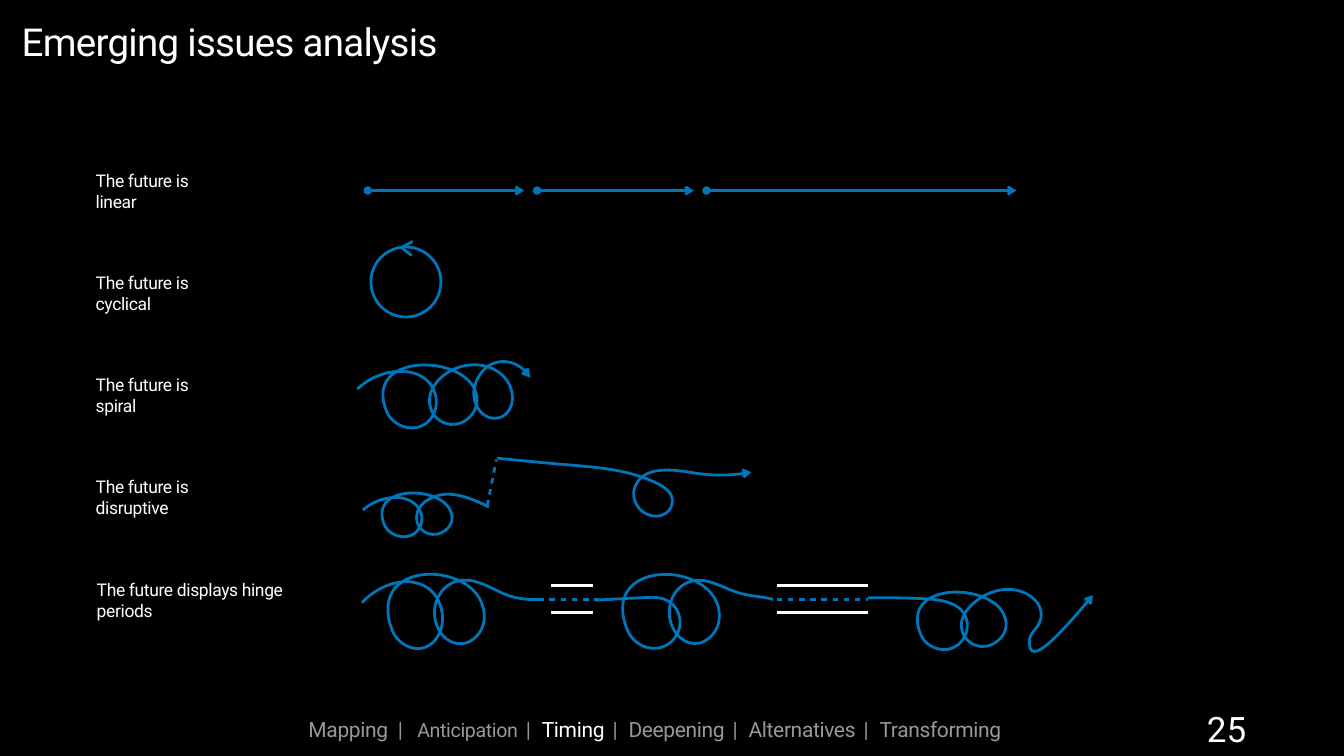
from dataclasses import dataclass
from typing import Any

import lxml.etree
import pptx
import pptx.dml.color
import pptx.enum.shapes
import pptx.enum.text
import pptx.oxml.ns
import pptx.util

Inches = pptx.util.Inches
qn = pptx.oxml.ns.qn
Align = pptx.enum.text.PP_ALIGN
Anchor = pptx.enum.text.MSO_ANCHOR

BLACK = pptx.dml.color.RGBColor(0x00, 0x00, 0x00)
WHITE = pptx.dml.color.RGBColor(0xFF, 0xFF, 0xFF)
GREY = pptx.dml.color.RGBColor(0x98, 0x98, 0x98)
BLUE = pptx.dml.color.RGBColor(0x00, 0x76, 0xBA)
FONT = "Roboto"
STROKE = 4
HINGE_Y = 11.89
HINGE_GAP = 0.27


@dataclass(frozen=True)
class Span:
    text: str
    size: float
    color: pptx.dml.color.RGBColor = WHITE
    spacing: float = -0.5


@dataclass(frozen=True)
class Label:
    text: str
    left: float
    top: float
    width: float


@dataclass(frozen=True)
class Line:
    start: tuple[float, float]
    end: tuple[float, float]
    color: pptx.dml.color.RGBColor = BLUE
    dashed: bool = False
    head: str = ""
    tail: str = ""


@dataclass(frozen=True)
class Curve:
    box: tuple[float, float, float, float]
    start: tuple[float, float]
    beziers: list[tuple[float, ...]]
    tail: str = ""


LABELS = [
    Label("The future is linear", 1.84, 3.52, 2.73),
    Label("The future is cyclical", 1.84, 5.55, 3),
    Label("The future is spiral", 1.84, 7.58, 2.73),
    Label("The future is disruptive", 1.84, 9.61, 3.35),
    Label("The future displays hinge periods", 1.86, 11.65, 4.85),
]

SPIRAL = Curve((7.09, 7.19, 3.43, 1.3), (7.09, 7.72), [
    (7.29, 7.53, 7.53, 7.42, 7.78, 7.38), (8.13, 7.33, 8.53, 7.43, 8.64, 7.83),
    (8.73, 8.16, 8.5, 8.51, 8.15, 8.49), (7.95, 8.48, 7.76, 8.36, 7.68, 8.18),
    (7.17, 7, 9.2, 7.01, 9.44, 7.78), (9.5, 7.97, 9.46, 8.17, 9.27, 8.32),
    (8.99, 8.53, 8.63, 8.4, 8.54, 8.08), (8.46, 7.8, 8.65, 7.52, 8.94, 7.36),
    (9.51, 7.05, 10.18, 7.36, 10.17, 7.92), (10.16, 8.07, 10.09, 8.21, 9.96, 8.27),
    (9.62, 8.42, 9.27, 8, 9.45, 7.57), (9.65, 7.1, 10.27, 7.06, 10.52, 7.49),
], "arrow")
BEFORE_DISRUPTION = Curve((7.2, 9.78, 2.49, 0.87), (7.2, 10.12), [
    (7.35, 9.99, 7.53, 9.91, 7.71, 9.88), (7.98, 9.84, 8.27, 9.92, 8.36, 10.19),
    (8.42, 10.43, 8.25, 10.67, 7.99, 10.65), (7.84, 10.64, 7.7, 10.56, 7.64, 10.44),
    (7.26, 9.61, 8.77, 9.62, 8.95, 10.16), (9, 10.29, 8.97, 10.43, 8.83, 10.53),
    (8.62, 10.68, 8.35, 10.59, 8.28, 10.37), (8.22, 10.16, 8.36, 9.96, 8.58, 9.87),
    (8.94, 9.71, 9.34, 9.88, 9.7, 10.06),
])
AFTER_DISRUPTION = Curve((9.86, 9.09, 5.05, 1.15), (9.86, 9.09), [
    (10.36, 9.14, 10.86, 9.19, 11.36, 9.23), (11.93, 9.28, 12.51, 9.33, 13.04, 9.59),
    (13.21, 9.67, 13.37, 9.8, 13.34, 9.98), (13.31, 10.23, 12.98, 10.33, 12.75, 10.15),
    (12.61, 10.04, 12.54, 9.85, 12.59, 9.69), (12.73, 9.25, 13.28, 9.3, 13.75, 9.38),
    (14.13, 9.44, 14.51, 9.44, 14.91, 9.37),
], "arrow")
HINGE_CURVES = [
    Curve((7.18, 11.4, 3.54, 1.47), (7.18, 11.96), [
        (7.39, 11.74, 7.63, 11.61, 7.88, 11.56), (8.24, 11.49, 8.65, 11.62, 8.76, 12.09),
        (8.86, 12.48, 8.62, 12.89, 8.26, 12.87), (8.06, 12.85, 7.86, 12.71, 7.78, 12.5),
        (7.26, 11.11, 9.33, 11.12, 9.58, 12.03), (9.65, 12.25, 9.61, 12.5, 9.41, 12.67),
        (9.13, 12.89, 8.78, 12.74, 8.66, 12.38), (8.54, 12.02, 8.72, 11.63, 9.07, 11.53),
        (9.38, 11.45, 9.67, 11.63, 9.95, 11.76), (10.06, 11.81, 10.18, 11.85, 10.3, 11.87),
        (10.44, 11.9, 10.58, 11.9, 10.72, 11.89),
    ]),
    Curve((11.82, 11.4, 3.53, 1.47), (11.82, 11.91), [
        (12.14, 11.89, 12.46, 11.87, 12.76, 11.86), (13, 11.84, 13.27, 11.84, 13.42, 12.08),
        (13.64, 12.44, 13.35, 12.91, 12.92, 12.86), (12.72, 12.84, 12.53, 12.7, 12.45, 12.5),
        (11.89, 11.13, 13.99, 11.11, 14.25, 12.03), (14.31, 12.25, 14.27, 12.5, 14.07, 12.66),
        (13.8, 12.89, 13.45, 12.74, 13.32, 12.38), (13.2, 12.01, 13.38, 11.62, 13.73, 11.53),
        (14.04, 11.45, 14.33, 11.66, 14.62, 11.75), (14.85, 11.83, 15.1, 11.83, 15.34, 11.89),
    ]),
    Curve((17.22, 11.69, 4.47, 1.21), (17.22, 11.86), [
        (17.6, 11.86, 17.98, 11.86, 18.37, 11.88), (18.71, 11.9, 19.1, 11.97, 19.18, 12.29),
        (19.26, 12.59, 19.03, 12.9, 18.72, 12.89), (18.53, 12.88, 18.35, 12.77, 18.28, 12.61),
        (17.8, 11.52, 19.71, 11.54, 19.94, 12.24), (20, 12.41, 19.96, 12.6, 19.78, 12.73),
        (19.52, 12.93, 19.17, 12.81, 19.09, 12.51), (19.02, 12.25, 19.22, 12.02, 19.46, 11.86),
        (20.15, 11.43, 20.84, 11.92, 20.62, 12.37), (20.57, 12.48, 20.44, 12.56, 20.43, 12.69),
        (20.38, 13.34, 21.22, 12.36, 21.69, 11.81),
    ], "arrow"),
]


def write_text(box: Any, spans: list[Span], align: Any = Align.LEFT,
               anchor: Any = Anchor.MIDDLE, wrap: bool = True) -> None:
    frame = box.text_frame
    frame.auto_size = pptx.enum.text.MSO_AUTO_SIZE.NONE
    frame.word_wrap = wrap
    frame.vertical_anchor = anchor
    frame.margin_left = frame.margin_right = Inches(0.06)
    frame.margin_top = frame.margin_bottom = Inches(0.06)
    para = frame.paragraphs[0]
    para.alignment = align
    para.line_spacing = 1.0
    para.space_before = pptx.util.Pt(0)
    for span in spans:
        run = para.add_run()
        run.text = span.text
        run.font.name = FONT
        run.font.size = pptx.util.Pt(span.size)
        run.font.color.rgb = span.color
        run.font._element.set("spc", str(round(span.spacing * 100)))


def add_text(slide: Any, place: tuple[float, float, float, float],
             spans: list[Span], **layout: Any) -> None:
    box = slide.shapes.add_textbox(*map(Inches, place))
    write_text(box, spans, **layout)


def style_line(shape: Any, color: Any, dashed: bool = False,
               head: str = "", tail: str = "") -> None:
    shape.line.color.rgb = color
    shape.line.width = pptx.util.Pt(STROKE)
    outline = shape.line._get_or_add_ln()
    if dashed:
        dash = lxml.etree.SubElement(outline, qn("a:custDash"))
        lxml.etree.SubElement(dash, qn("a:ds"), d="200000", sp="200000")
    for tag, kind in (("a:headEnd", head), ("a:tailEnd", tail)):
        if kind:
            lxml.etree.SubElement(outline, qn(tag), type=kind)


def draw_line(shapes: Any, line: Line) -> None:
    connector = shapes.add_connector(pptx.enum.shapes.MSO_CONNECTOR.STRAIGHT,
                                     *map(Inches, line.start + line.end))
    style_line(connector, line.color, line.dashed, line.head, line.tail)
    lxml.etree.SubElement(connector._element.spPr, qn("a:effectLst"))


def draw_curve(shapes: Any, curve: Curve) -> None:
    left, top, width, height = map(Inches, curve.box)
    builder = shapes.build_freeform(left, top)
    builder.add_line_segments([(left + width, top + height)], close=False)
    shape = builder.convert_to_shape()
    outline = shape._element.xpath(".//a:path")[0]
    for child in list(outline):
        outline.remove(child)
    steps = [("a:moveTo", curve.start)] + [("a:cubicBezTo", bezier) for bezier in curve.beziers]
    for tag, numbers in steps:
        step = lxml.etree.SubElement(outline, qn(tag))
        for x, y in zip(numbers[::2], numbers[1::2]):
            lxml.etree.SubElement(step, qn("a:pt"), x=str(Inches(x) - left), y=str(Inches(y) - top))
    shape.fill.background()
    shape.shadow.inherit = False
    style_line(shape, BLUE, tail=curve.tail)


def draw_cycle(slide: Any) -> None:
    group = slide.shapes.add_group_shape()
    circle = group.shapes.add_shape(pptx.enum.shapes.MSO_SHAPE.OVAL,
                                    *map(Inches, (7.36, 4.9, 1.39, 1.39)))
    circle.fill.background()
    circle.shadow.inherit = False
    style_line(circle, BLUE)
    draw_line(group.shapes, Line((7.95, 4.92), (8.19, 4.79)))
    draw_line(group.shapes, Line((7.95, 4.9), (8.17, 5.07)))


def draw_disruption(slide: Any) -> None:
    group = slide.shapes.add_group_shape()
    draw_curve(group.shapes, BEFORE_DISRUPTION)
    draw_curve(group.shapes, AFTER_DISRUPTION)
    draw_line(group.shapes, Line((9.67, 10.03), (9.85, 9.12), dashed=True))


def draw_hinges(slide: Any) -> None:
    for curve in HINGE_CURVES:
        draw_curve(slide.shapes, curve)
    for start, end in ((10.68, 11.88), (15.41, 17.22)):
        draw_line(slide.shapes, Line((start, HINGE_Y), (end, HINGE_Y), dashed=True))
    for start, end in ((10.93, 11.77), (15.41, 17.22)):
        for y in (HINGE_Y - HINGE_GAP, HINGE_Y + HINGE_GAP):
            draw_line(slide.shapes, Line((start, y), (end, y), WHITE))


def navigation() -> list[Span]:
    spans = [Span("Mapping", 30, GREY), Span(" | ", 30, GREY, 6.5),
             Span("Anticipation", 28, GREY)]
    for name in ("Timing", "Deepening", "Alternatives", "Transforming"):
        spans.append(Span(" | ", 30, GREY, 4))
        spans.append(Span(name, 30, WHITE if name == "Timing" else GREY))
    return spans


def main() -> None:
    deck = pptx.Presentation()
    deck.slide_width, deck.slide_height = Inches(26.67), Inches(15)
    slide = deck.slides.add_slide(deck.slide_layouts[5])
    slide.background.fill.solid()
    slide.background.fill.fore_color.rgb = BLACK
    title = slide.shapes.title
    title.left, title.top, title.width, title.height = map(Inches, (0.37, 0.31, 8.68, 1.03))
    write_text(title, [Span("Emerging issues analysis", 55, spacing=-1)])
    for label in LABELS:
        add_text(slide, (label.left, label.top, label.width, 0.52), [Span(label.text, 25)])
    for start, end in ((7.3, 10.4), (10.66, 13.77), (14.02, 20.17)):
        draw_line(slide.shapes, Line((start, 3.78), (end, 3.78), head="oval", tail="arrow"))
    draw_cycle(slide)
    draw_curve(slide.shapes, SPIRAL)
    draw_disruption(slide)
    draw_hinges(slide)
    add_text(slide, (5.87, 14.15, 14.25, 0.62), navigation(), align=Align.CENTER)
    add_text(slide, (23.89, 14, 0.9, 0.93), [Span("25", 50, spacing=0)],
             align=Align.CENTER, anchor=Anchor.BOTTOM, wrap=False)
    deck.save("out.pptx")


if __name__ == "__main__":
    main()
